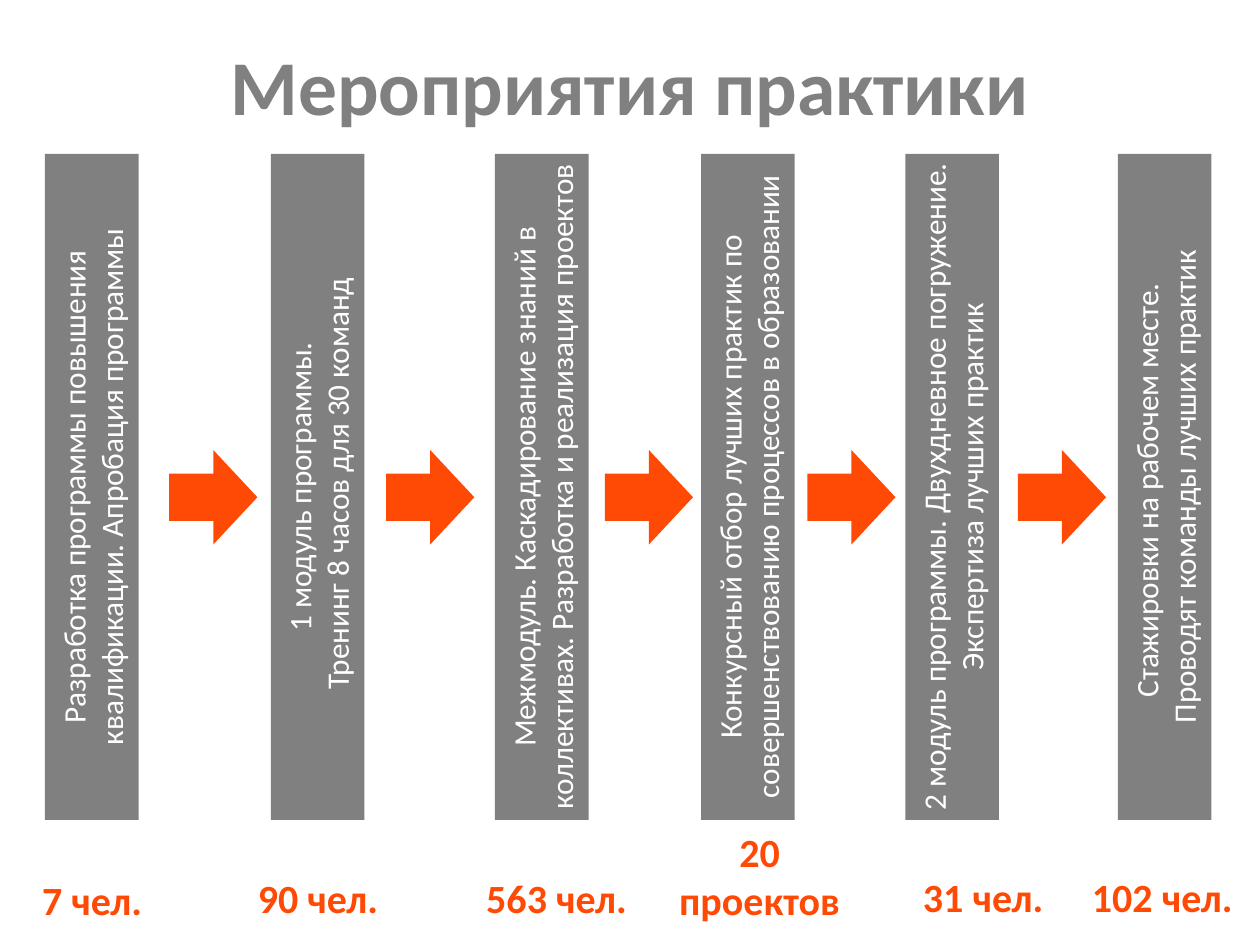
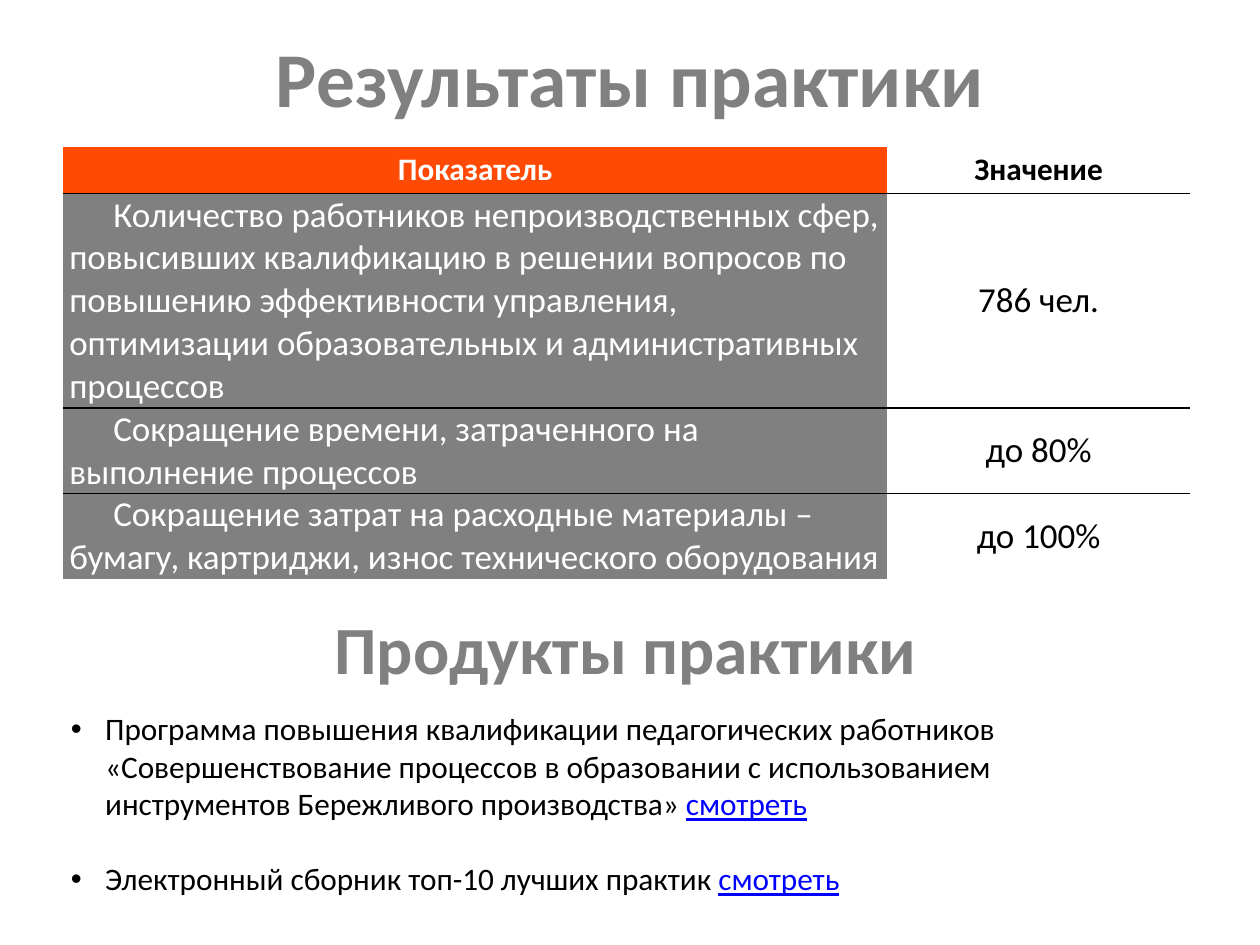
"""Build two slides: the stages of a practice, and its results and products."""
from lxml import etree
from pptx import Presentation
from pptx.dml.color import RGBColor
from pptx.enum import shapes, text
from pptx.oxml.ns import qn
from pptx.util import Inches, Pt

COLORS = {"gray": "808080", "orange": "FF4A05", "white": "FFFFFF",
          "black": "000000", "link": "0000FF"}
FONT = "Calibri"
CENTER, LEFT = text.PP_ALIGN.CENTER, text.PP_ALIGN.LEFT
MIDDLE, TOP = text.MSO_ANCHOR.MIDDLE, text.MSO_ANCHOR.TOP

STAGES = [
    (0.5, ["Разработка программы повышения квалификации. Апробация программы"]),
    (3.01, ["1 модуль программы.", " Тренинг 8 часов для 30 команд"]),
    (5.5, ["Межмодуль. Каскадирование знаний в коллективах. "
           "Разработка и реализация проектов"]),
    (7.79, ["Конкурсный отбор лучших практик по "
            "совершенствованию процессов в образовании"]),
    (10.06, ["2 модуль программы. Двухдневное погружение. "
             "Экспертиза лучших практик"]),
    (12.42, ["Стажировки на рабочем месте. ", "Проводят команды лучших практик"]),
]
ARROW_LEFTS = [1.88, 4.29, 6.72, 8.97, 11.31]
TOTALS = [
    ("7 чел.", 0.16, 9.68, 1.73, 0.64),
    ("90 чел.", 2.67, 9.66, 1.73, 0.64),
    ("563 чел.", 5.16, 9.66, 2.05, 0.64),
    ("20 проектов", 7.2, 9.15, 2.48, 1.18),
    ("31 чел.", 10.06, 9.64, 1.73, 0.64),
    ("102 чел.", 11.98, 9.64, 1.87, 0.64),
]
HEADER = ("Показатель", "Значение")
RESULTS = [
    ("Количество работников непроизводственных сфер, повысивших квалификацию "
     "в решении вопросов по повышению эффективности управления, оптимизации "
     "образовательных и административных процессов", "786 чел."),
    ("Сокращение времени, затраченного на выполнение процессов", "до 80%"),
    ("Сокращение затрат на расходные материалы – бумагу, картриджи, "
     "износ технического оборудования", "до 100%"),
]
COL_WIDTHS = (9.16, 3.36)
ROW_HEIGHTS = (0.52, 2.38, 0.95, 0.95)
PRODUCTS = [
    (17, "Программа повышения квалификации педагогических работников "
         "«Совершенствование процессов в образовании с использованием "
         "инструментов Бережливого производства» "),
    (30, "Электронный сборник топ-10 лучших практик "),
]
LINK_TEXT = "смотреть"


def rgb(color):
    return RGBColor.from_string(COLORS[color])


def box(*lengths):
    return [Inches(v) for v in lengths]


def add_run(p, words, size, color, bold=False, underline=None):
    r = p.add_run()
    r.text = words
    r.font.name, r.font.size, r.font.bold = FONT, Pt(size), bold
    r.font.underline = underline
    r.font.color.rgb = rgb(color)


def write(tf, lines, size, color, bold=False, align=CENTER):
    for i, line in enumerate(lines):
        p = tf.paragraphs[0] if i == 0 else tf.add_paragraph()
        p.alignment = align
        add_run(p, line, size, color, bold)


def add_slide(prs, title, top):
    s = prs.slides.add_slide(prs.slide_layouts[5])
    sp = s.shapes.title
    sp.left, sp.top, sp.width, sp.height = box(0.7, top, 12.6, 1.29)
    tf = sp.text_frame
    tf.auto_size, tf.vertical_anchor = text.MSO_AUTO_SIZE.NONE, MIDDLE
    tf.margin_left = tf.margin_right = Inches(0.14)
    tf.margin_top = tf.margin_bottom = Inches(0.07)
    write(tf, [title], 62, "gray", True)
    return s


def add_block(s, kind, color, *place):
    sp = s.shapes.add_shape(kind, *box(*place))
    sp.shadow.inherit = False
    sp.fill.solid()
    sp.fill.fore_color.rgb = rgb(color)
    sp.line.fill.background()
    return sp


def add_text(s, *place):
    tf = s.shapes.add_textbox(*box(*place)).text_frame
    tf.word_wrap = True
    return tf


def set_bullet(p, indent):
    pPr = p._p.get_or_add_pPr()
    pPr.set("marL", str(Inches(indent)))
    pPr.set("indent", str(-Inches(indent)))
    etree.SubElement(pPr, qn("a:buFont"), typeface="Arial")
    etree.SubElement(pPr, qn("a:buChar"), char="•")


def rule_cell(cell, sides):
    tcPr = cell._tc.get_or_add_tcPr()
    for i, side in enumerate(sides):
        ln = etree.Element(qn("a:" + side), w=str(Pt(1)))
        fill = etree.SubElement(ln, qn("a:solidFill"))
        etree.SubElement(fill, qn("a:srgbClr"), val=COLORS["black"])
        tcPr.insert(i, ln)


def fill_cell(cell, words, is_header, is_label):
    if is_label:
        cell.fill.solid()
        cell.fill.fore_color.rgb = rgb("orange" if is_header else "gray")
    else:
        cell.fill.background()
    body_label = is_label and not is_header
    if not is_header:
        cell.margin_left = cell.margin_right = Inches(0.07)
        cell.margin_top = cell.margin_bottom = 0
    cell.vertical_anchor = TOP if is_label or is_header else MIDDLE
    write(cell.text_frame, [words], 25 if is_header else 28,
          "white" if is_label else "black", is_header,
          LEFT if body_label else CENTER)
    if body_label:
        pPr = cell.text_frame.paragraphs[0]._p.get_or_add_pPr()
        pPr.set("indent", str(Inches(0.49)))


def add_results(s):
    rows = [HEADER] + RESULTS
    table = s.shapes.add_table(len(rows), len(HEADER), *box(
        0.7, 1.63, sum(COL_WIDTHS), sum(ROW_HEIGHTS))).table
    table.first_row = table.horz_banding = False
    style = table._tbl.tblPr.find(qn("a:tableStyleId"))
    style.text = "{2D5ABB26-0587-4C30-8999-92F81FD0307C}"
    for column, width in zip(table.columns, COL_WIDTHS):
        column.width = Inches(width)
    for i, (row, height) in enumerate(zip(rows, ROW_HEIGHTS)):
        table.rows[i].height = Inches(height)
        sides = (["lnT"] if i else []) + (["lnB"] if i < len(rows) - 1 else [])
        for j, words in enumerate(row):
            fill_cell(table.cell(i, j), words, i == 0, j == 0)
            rule_cell(table.cell(i, j), sides)


def build_stages(prs):
    s = add_slide(prs, "Мероприятия практики", 0.29)
    for left, lines in STAGES:
        sp = add_block(s, shapes.MSO_SHAPE.RECTANGLE, "gray", left, 1.71, 1.04, 7.4)
        tf = sp.text_frame
        tf.word_wrap, tf.vertical_anchor = True, MIDDLE
        tf._txBody.bodyPr.set("vert", "vert270")
        write(tf, lines, 25, "white")
    for left in ARROW_LEFTS:
        add_block(s, shapes.MSO_SHAPE.RIGHT_ARROW, "orange", left, 5, 0.98, 1.05)
    for words, *place in TOTALS:
        write(add_text(s, *place), [words], 32, "orange", True)


def build_results(prs):
    s = add_slide(prs, "Результаты практики", 0.21)
    add_results(s)
    tf = add_text(s, 0.69, 6.7, 12.52, 3.35)
    write(tf, ["Продукты практики"], 54, "gray", True)
    for gap, words in PRODUCTS:
        p = tf.add_paragraph()
        p.space_before = Pt(gap)
        set_bullet(p, 0.38)
        add_run(p, words, 25, "black")
        add_run(p, LINK_TEXT, 25, "link", underline=True)


def main():
    prs = Presentation()
    prs.slide_width, prs.slide_height = box(14, 10.5)
    build_stages(prs)
    build_results(prs)
    prs.save("out.pptx")


if __name__ == "__main__":
    main()
